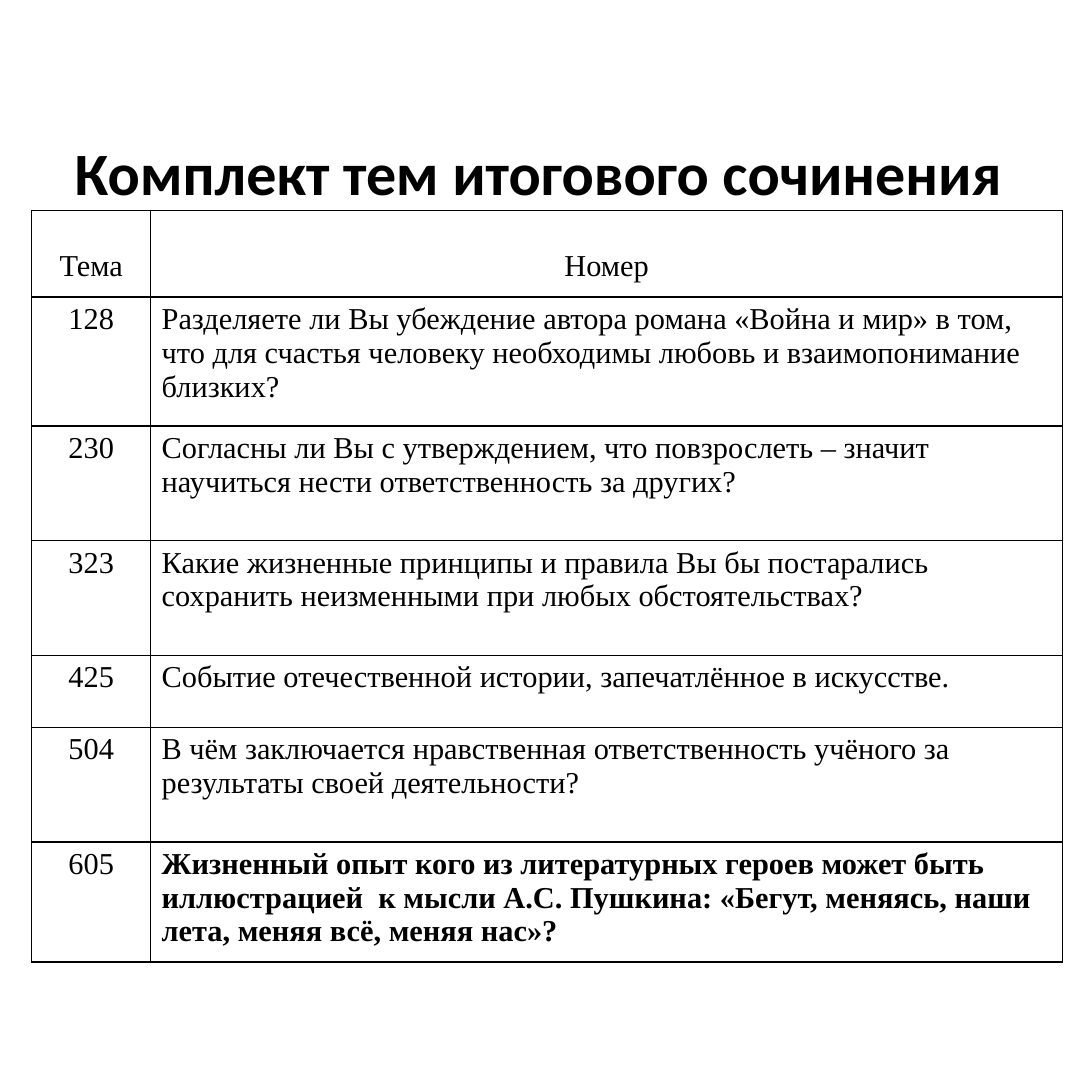
from pptx import Presentation
from pptx.dml.color import RGBColor
from pptx.enum.text import MSO_ANCHOR as Anchor, PP_ALIGN as Align
from pptx.oxml import parse_xml
from pptx.oxml.ns import nsdecls
from pptx.util import Pt

BLACK = RGBColor(0, 0, 0)
WIDTHS = [78.5, 601.2]
HEIGHTS = [56.9, 85, 75.6, 75.6, 47.5, 75.6, 75.6]
ROWS = [
    ("Тема", "Номер"),
    ("128", "Разделяете ли Вы убеждение автора романа «Война и мир» в том, что для счастья человеку необходимы любовь и взаимопонимание близких?"),
    ("230", "Согласны ли Вы с утверждением, что повзрослеть – значит научиться нести ответственность за других?"),
    ("323", "Какие жизненные принципы и правила Вы бы постарались сохранить неизменными при любых обстоятельствах?"),
    ("425", "Событие отечественной истории, запечатлённое в искусстве."),
    ("504", "В чём заключается нравственная ответственность учёного за результаты своей деятельности?"),
    ("605", "Жизненный опыт кого из литературных героев может быть иллюстрацией  к мысли А.С. Пушкина: «Бегут, меняясь, наши лета, меняя всё, меняя нас»?"),
]


def write(para, text, face, size, bold, align):
    para.text = text
    para.alignment = align
    font = para.font
    font.name = face
    font.size = Pt(size)
    font.bold = bold
    font.color.rgb = BLACK


def border(cell):
    props = cell._tc.get_or_add_tcPr()
    for side in ("lnL", "lnR", "lnT", "lnB"):
        props.append(parse_xml(
            f'<a:{side} {nsdecls("a")} w="{Pt(1)}"><a:solidFill>'
            f'<a:srgbClr val="{BLACK}"/></a:solidFill></a:{side}>'))


deck = Presentation()
deck.slide_width = deck.slide_height = Pt(720)
slide = deck.slides.add_slide(deck.slide_layouts[6])

title = slide.shapes.add_textbox(Pt(36), Pt(28.8), Pt(648), Pt(120.2))
frame = title.text_frame
frame.word_wrap = True
frame.vertical_anchor = Anchor.BOTTOM
frame.margin_right = Pt(17)
frame.margin_bottom = Pt(12)
write(frame.paragraphs[0], "Комплект тем итогового сочинения",
      "Calibri", 39.6, True, Align.CENTER)

table = slide.shapes.add_table(
    len(ROWS), len(WIDTHS), Pt(20.9), Pt(139),
    Pt(sum(WIDTHS)), Pt(sum(HEIGHTS))).table
table.first_row = False
table.horz_banding = False
for col, width in zip(table.columns, WIDTHS):
    col.width = Pt(width)

last = len(ROWS) - 1
for r, (row, height) in enumerate(zip(ROWS, HEIGHTS)):
    table.rows[r].height = Pt(height)
    for c, text in enumerate(row):
        cell = table.cell(r, c)
        border(cell)
        cell.fill.background()
        if r == 0:
            cell.vertical_anchor = Anchor.BOTTOM
            cell.margin_bottom = Pt(9.2)
        write(cell.text_frame.paragraphs[0], text, "Times New Roman", 20,
              r == last and c == 1,
              Align.CENTER if r == 0 or c == 0 else Align.LEFT)

deck.save("out.pptx")
